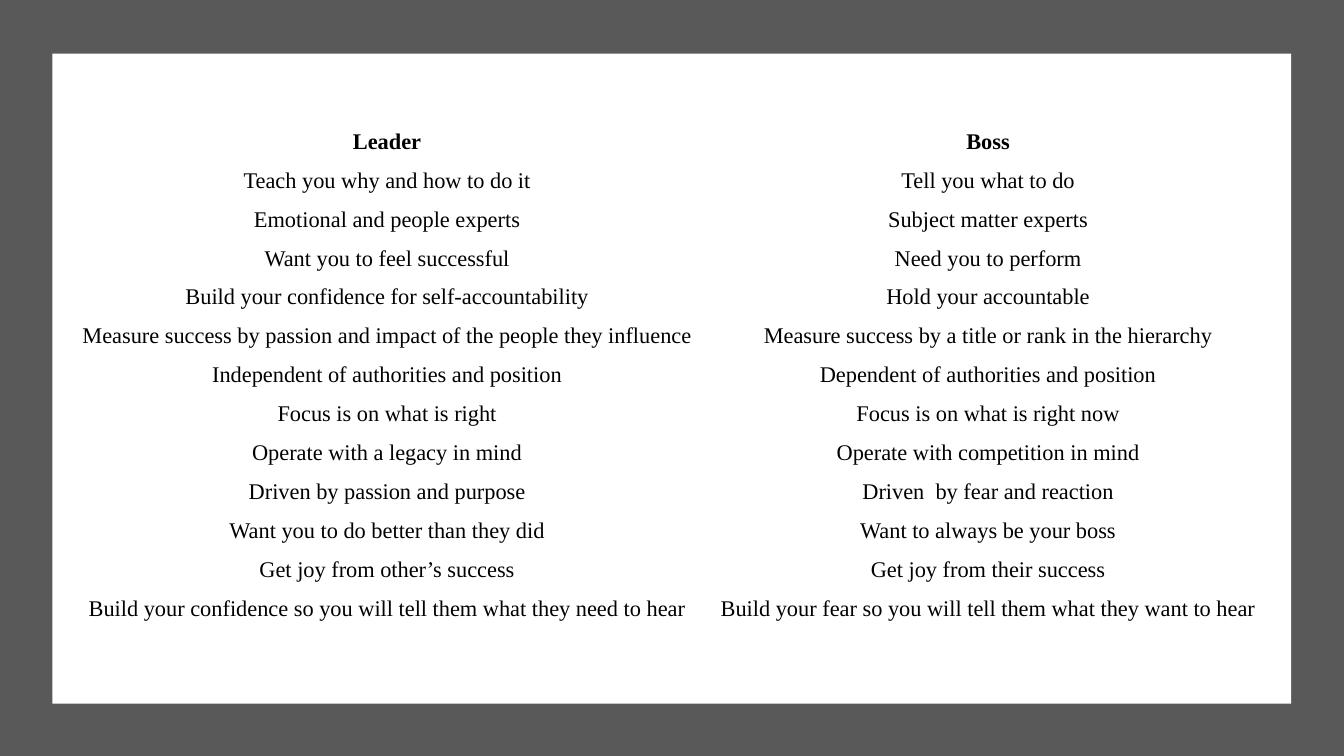
from dataclasses import dataclass

from lxml import etree
from pptx import Presentation
from pptx.dml.color import RGBColor
from pptx.enum import shapes, text
from pptx.oxml import ns
from pptx.util import Cm, Pt

FONT = "Times New Roman"
GAP = chr(160)  # no-break space, keeps its width when centred
COLS = (16.09, 14.2)
ROW = 0.98


@dataclass
class Panel:
    left: float
    top: float
    width: float
    height: float
    fill: str


@dataclass
class Pair:
    leader: str
    boss: str


PANELS = [
    Panel(0, 0, 33.87, 19.05, "595959"),
    Panel(1.32, 1.35, 31.22, 16.38, "FFFFFF"),
]

PAIRS = [
    Pair("Leader", "Boss"),
    Pair("Teach you why and how to do it", "Tell you what to do"),
    Pair("Emotional and people experts", "Subject matter experts"),
    Pair("Want you to feel successful", "Need you to perform"),
    Pair("Build your confidence for self-accountability", "Hold your accountable"),
    Pair("Measure success by passion and impact of the people they influence",
         "Measure success by a title or rank in the hierarchy"),
    Pair("Independent of authorities and position",
         "Dependent of authorities and position"),
    Pair("Focus is on what is right", "Focus is on what is right now"),
    Pair("Operate with a legacy in mind", "Operate with competition in mind"),
    Pair("Driven by passion and purpose", f"Driven{GAP} by fear and reaction"),
    Pair("Want you to do better than they did", "Want to always be your boss"),
    Pair("Get joy from other’s success", "Get joy from their success"),
    Pair("Build your confidence so you will tell them what they need to hear",
         "Build your fear so you will tell them what they want to hear"),
]


def paint(color, value: str) -> None:
    color.rgb = RGBColor.from_string(value)


def draw_panel(slide, panel: Panel) -> None:
    shape = slide.shapes.add_shape(
        shapes.MSO_SHAPE.RECTANGLE, Cm(panel.left), Cm(panel.top),
        Cm(panel.width), Cm(panel.height))
    shape.shadow.inherit = False
    shape.fill.solid()
    paint(shape.fill.fore_color, panel.fill)
    shape.line.fill.background()


def edge_cell(cell, value: str, width: float) -> None:
    """Draw the same border on all four sides of a cell."""
    props = cell._tc.get_or_add_tcPr()
    for side in ("lnL", "lnR", "lnT", "lnB"):
        line = etree.SubElement(props, ns.qn(f"a:{side}"), w=str(Pt(width)))
        fill = etree.SubElement(line, ns.qn("a:solidFill"))
        etree.SubElement(fill, ns.qn("a:srgbClr"), val=value)


def fill_cell(cell, words: str, bold: bool) -> None:
    edge_cell(cell, "FFFFFF", 0.6)
    cell.fill.background()
    cell.margin_left = cell.margin_right = Cm(0.15)
    cell.margin_top = cell.margin_bottom = Cm(0.08)
    cell.vertical_anchor = text.MSO_ANCHOR.TOP
    para = cell.text_frame.paragraphs[0]
    para.text = words + GAP
    para.alignment = text.PP_ALIGN.CENTER
    font = para.runs[0].font
    font.name, font.size, font.bold = FONT, Pt(16), bold
    paint(font.color, "000000")


def draw_table(slide, pairs: list[Pair]) -> None:
    table = slide.shapes.add_table(
        len(pairs), len(COLS), Cm(1.78), Cm(3.18),
        Cm(sum(COLS)), Cm(ROW * len(pairs))).table
    table.first_row = table.horz_banding = False
    for col, width in zip(table.columns, COLS):
        col.width = Cm(width)
    for i, pair in enumerate(pairs):
        table.rows[i].height = Cm(ROW)
        for j, words in enumerate((pair.leader, pair.boss)):
            fill_cell(table.cell(i, j), words, bold=i == 0)


def main() -> None:
    deck = Presentation()
    deck.slide_width, deck.slide_height = Cm(33.87), Cm(19.05)
    slide = deck.slides.add_slide(deck.slide_layouts[6])
    for panel in PANELS:
        draw_panel(slide, panel)
    draw_table(slide, PAIRS)
    deck.save("out.pptx")


if __name__ == "__main__":
    main()
